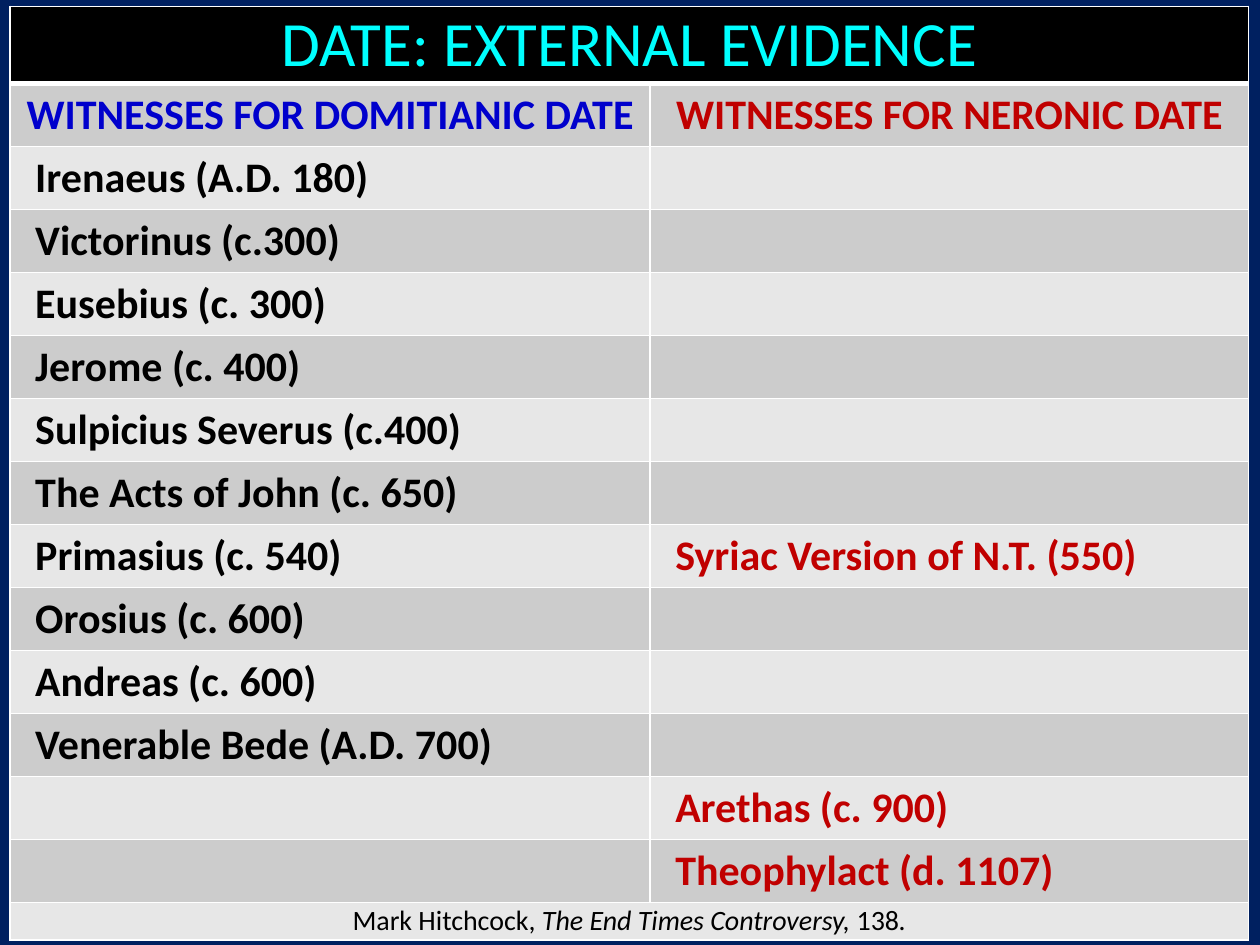
from dataclasses import dataclass

from lxml import etree
from pptx import Presentation
from pptx.dml.color import RGBColor
from pptx.enum.text import MSO_ANCHOR, PP_ALIGN
from pptx.oxml.ns import qn
from pptx.util import Inches, Pt

CENTER, LEFT = PP_ALIGN.CENTER, PP_ALIGN.LEFT
MIDDLE = MSO_ANCHOR.MIDDLE

TITLE = "DATE: EXTERNAL EVIDENCE"
HEADINGS = ("WITNESSES FOR DOMITIANIC DATE", "WITNESSES FOR NERONIC DATE")
WITNESSES = [
    ("Irenaeus (A.D. 180)", ""),
    ("Victorinus (c.300)", ""),
    ("Eusebius (c. 300)", ""),
    ("Jerome (c. 400)", ""),
    ("Sulpicius Severus (c.400)", ""),
    ("The Acts of John (c. 650)", ""),
    ("Primasius (c. 540)", "Syriac Version of N.T. (550)"),
    ("Orosius (c. 600)", ""),
    ("Andreas (c. 600)", ""),
    ("Venerable Bede (A.D. 700)", ""),
    ("", "Arethas (c. 900)"),
    ("", "Theophylact (d. 1107)"),
]
SOURCE = [
    ("Mark Hitchcock, ", False),
    ("The End Times Controversy,", True),
    (" 138", False),
    (".", True),
]


@dataclass(frozen=True)
class Theme:
    font: str = "Calibri"
    background: str = "002060"
    title_fill: str = "000000"
    title: str = "00FFFF"
    headings: tuple = ("0000CC", "C00000")
    entries: tuple = ("000000", "C00000")
    bands: tuple = ("CCCCCC", "E7E7E7")
    source: str = "000000"
    border: str = "FFFFFF"
    title_size: int = 36
    body_size: int = 24
    source_size: int = 16
    thin: int = 1
    thick: int = 3


THEME = Theme()
SLIDE_SIZE = (10, 7.5)
TABLE_LEFT, TABLE_TOP = 0.08, 0.05
COLUMN_WIDTHS = (5.08, 4.75)
ROW_HEIGHTS = [0.6] + [0.5] * (len(WITNESSES) + 1) + [0.3]
CELL_MARGIN, ENTRY_INDENT = 0.07, 0.13


def set_borders(cell, row_index):
    properties = cell._tc.get_or_add_tcPr()
    thick_side = {0: "lnB", 1: "lnT"}.get(row_index)
    for side in ("lnL", "lnR", "lnT", "lnB"):
        width = THEME.thick if side == thick_side else THEME.thin
        line = etree.SubElement(properties, qn(f"a:{side}"), w=str(Pt(width)))
        fill = etree.SubElement(line, qn("a:solidFill"))
        etree.SubElement(fill, qn("a:srgbClr"), val=THEME.border)


def style_cell(cell, row_index):
    set_borders(cell, row_index)
    color = THEME.title_fill if row_index == 0 else THEME.bands[(row_index - 1) % 2]
    cell.fill.solid()
    cell.fill.fore_color.rgb = RGBColor.from_string(color)
    cell.vertical_anchor = MIDDLE
    cell.margin_left = cell.margin_right = Inches(CELL_MARGIN)
    cell.margin_top = cell.margin_bottom = 0


def write(cell, runs, size, color, bold=False, alignment=CENTER, indent=0):
    paragraph = cell.text_frame.paragraphs[0]
    paragraph.alignment = alignment
    paragraph._p.get_or_add_pPr().set("marL", str(Inches(indent)))
    for text, italic in runs:
        run = paragraph.add_run()
        run.text = text
        run.font.name = THEME.font
        run.font.size = Pt(size)
        run.font.bold = bold
        run.font.italic = italic
        run.font.color.rgb = RGBColor.from_string(color)


def add_evidence_table(slide):
    frame = slide.shapes.add_table(
        len(ROW_HEIGHTS), len(COLUMN_WIDTHS),
        Inches(TABLE_LEFT), Inches(TABLE_TOP),
        Inches(sum(COLUMN_WIDTHS)), Inches(sum(ROW_HEIGHTS)),
    )
    table = frame.table
    table.first_row = table.horz_banding = False
    for column, width in zip(table.columns, COLUMN_WIDTHS):
        column.width = Inches(width)
    for row_index, (row, height) in enumerate(zip(table.rows, ROW_HEIGHTS)):
        row.height = Inches(height)
        for cell in row.cells:
            style_cell(cell, row_index)

    last = len(ROW_HEIGHTS) - 1
    for row_index in (0, last):
        table.cell(row_index, 0).merge(table.cell(row_index, 1))
    write(table.cell(0, 0), [(TITLE, False)], THEME.title_size, THEME.title)
    write(table.cell(last, 0), SOURCE, THEME.source_size, THEME.source)

    for column, (heading, color) in enumerate(zip(HEADINGS, THEME.headings)):
        write(table.cell(1, column), [(heading, False)], THEME.body_size, color, True)
    for row_index, names in enumerate(WITNESSES, start=2):
        for column, name in enumerate(names):
            if name:
                write(table.cell(row_index, column), [(name, False)], THEME.body_size,
                      THEME.entries[column], True, LEFT, ENTRY_INDENT)


def main():
    presentation = Presentation()
    presentation.slide_width, presentation.slide_height = map(Inches, SLIDE_SIZE)
    slide = presentation.slides.add_slide(presentation.slide_layouts[6])
    slide.background.fill.solid()
    slide.background.fill.fore_color.rgb = RGBColor.from_string(THEME.background)
    add_evidence_table(slide)
    presentation.save("out.pptx")


if __name__ == "__main__":
    main()
